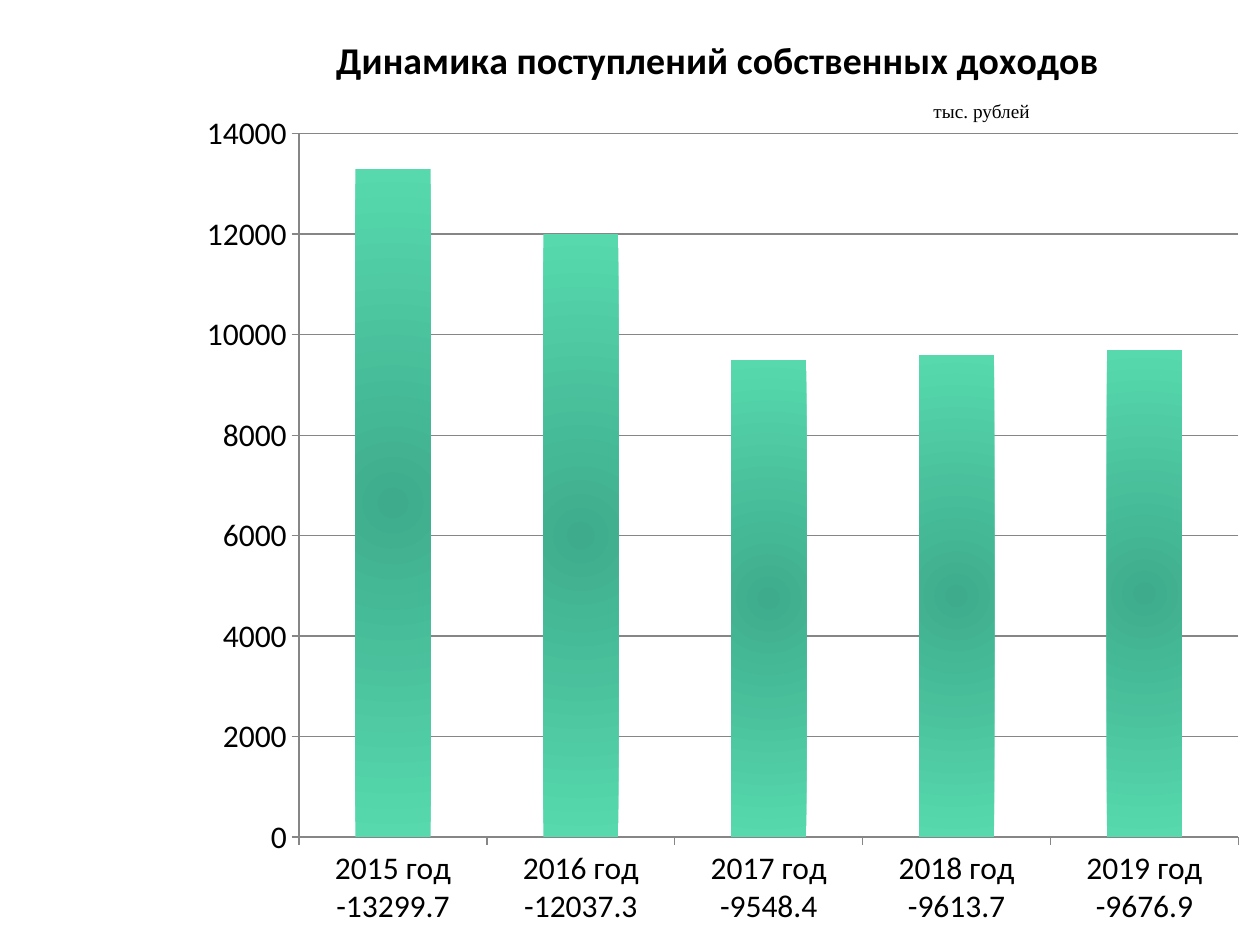
from typing import NamedTuple

from lxml import etree
from pptx import Presentation
from pptx.chart import data as chart_data
from pptx.dml.color import RGBColor
from pptx.enum import chart as ch, text
from pptx.oxml import ns, parse_xml
from pptx.util import Inches, Pt

BLACK = RGBColor(0x00, 0x00, 0x00)
GRAY = RGBColor(0x86, 0x86, 0x86)
GREEN_DARK = RGBColor(0x3E, 0xAC, 0x8C)
GREEN_LIGHT = RGBColor(0x57, 0xD9, 0xAD)
HEADING = "Динамика поступлений собственных доходов "


class Income(NamedTuple):
    label: str
    amount: int


INCOMES = [
    Income("2015 год -13299.7", 13300),
    Income("2016 год -12037.3", 12000),
    Income("2017 год -9548.4", 9500),
    Income("2018 год -9613.7", 9600),
    Income("2019 год -9676.9", 9700),
]


def manual_layout(target: str, **fractions: float):
    """Layout element placed by fractions of the chart area."""
    layout = etree.Element(ns.qn("c:layout"), nsmap={"c": ns.nsuri("c")})
    manual = etree.SubElement(layout, ns.qn("c:manualLayout"))
    values = {"xMode": "edge", "yMode": "edge", **fractions}
    if target:
        values = {"layoutTarget": target, **values}
    for tag, value in values.items():
        etree.SubElement(manual, ns.qn(f"c:{tag}")).set("val", str(value))
    return layout


def fill_radial(series, center: RGBColor, edge: RGBColor) -> None:
    series.format.fill.background()
    sp_pr = series.format.fill._xPr
    sp_pr.replace(sp_pr.find(ns.qn("a:noFill")), parse_xml(
        f'<a:gradFill {ns.nsdecls("a")} rotWithShape="1"><a:gsLst>'
        f'<a:gs pos="0"><a:srgbClr val="{center}"/></a:gs>'
        f'<a:gs pos="100000"><a:srgbClr val="{edge}"/></a:gs></a:gsLst>'
        '<a:path path="circle"><a:fillToRect l="50000" t="50000" r="50000" b="50000"/>'
        '</a:path></a:gradFill>'))


def style_axis(axis) -> None:
    axis.major_tick_mark = ch.XL_TICK_MARK.OUTSIDE
    axis.minor_tick_mark = ch.XL_TICK_MARK.NONE
    axis.format.line.color.rgb = GRAY
    axis.format.line.width = Pt(0.75)


def add_income_chart(slide) -> None:
    data = chart_data.CategoryChartData()
    data.categories = [i.label for i in INCOMES]
    data.add_series(HEADING, [i.amount for i in INCOMES])
    chart = slide.shapes.add_chart(
        ch.XL_CHART_TYPE.COLUMN_STACKED,
        Inches(1.47), Inches(0), Inches(8.53), Inches(7.5), data).chart
    chart.has_legend = False
    chart.font.name = "Calibri"
    chart.font.size = Pt(18)
    chart.font.color.rgb = BLACK

    chart.has_title = True
    r = chart.chart_title.text_frame.paragraphs[0].add_run()
    r.text = HEADING
    r.font.name = "Calibri"
    r.font.size = Pt(21.6)
    r.font.bold = True
    r.font.color.rgb = BLACK
    title = chart.chart_title._element
    for old in title.findall(ns.qn("c:layout")):
        title.remove(old)
    title.find(ns.qn("c:tx")).addnext(manual_layout("", x=0.134, y=0.028))

    plot = chart.plots[0]
    plot.gap_width = 150
    plot.overlap = 100
    plot.vary_by_categories = False
    fill_radial(plot.series[0], GREEN_DARK, GREEN_LIGHT)

    area = chart._chartSpace.chart.plotArea
    for old in area.findall(ns.qn("c:layout")):
        area.remove(old)
    area.insert(0, manual_layout("inner", x=0.106, y=0.1415, w=0.874, h=0.7445))

    style_axis(chart.category_axis)
    values = chart.value_axis
    style_axis(values)
    values.minimum_scale, values.maximum_scale, values.major_unit = 0, 14000, 2000
    values.tick_labels.number_format = "General"
    values.tick_labels.number_format_is_linked = False
    values.has_major_gridlines = True
    values.major_gridlines.format.line.color.rgb = GRAY
    values.major_gridlines.format.line.width = Pt(0.75)


def add_unit_label(slide) -> None:
    box = slide.shapes.add_textbox(Inches(7.31), Inches(0.74), Inches(0.98), Inches(0.29))
    tf = box.text_frame
    tf.word_wrap = False
    tf.auto_size = text.MSO_AUTO_SIZE.SHAPE_TO_FIT_TEXT
    r = tf.paragraphs[0].add_run()
    r.text = "тыс. рублей"
    r.font.name = "Times New Roman"
    r.font.size = Pt(11)
    r.font.color.rgb = BLACK


def main() -> None:
    prs = Presentation()
    prs.slide_width, prs.slide_height = Inches(10), Inches(7.5)
    slide = prs.slides.add_slide(prs.slide_layouts[6])
    add_income_chart(slide)
    add_unit_label(slide)
    prs.save("out.pptx")


if __name__ == "__main__":
    main()
